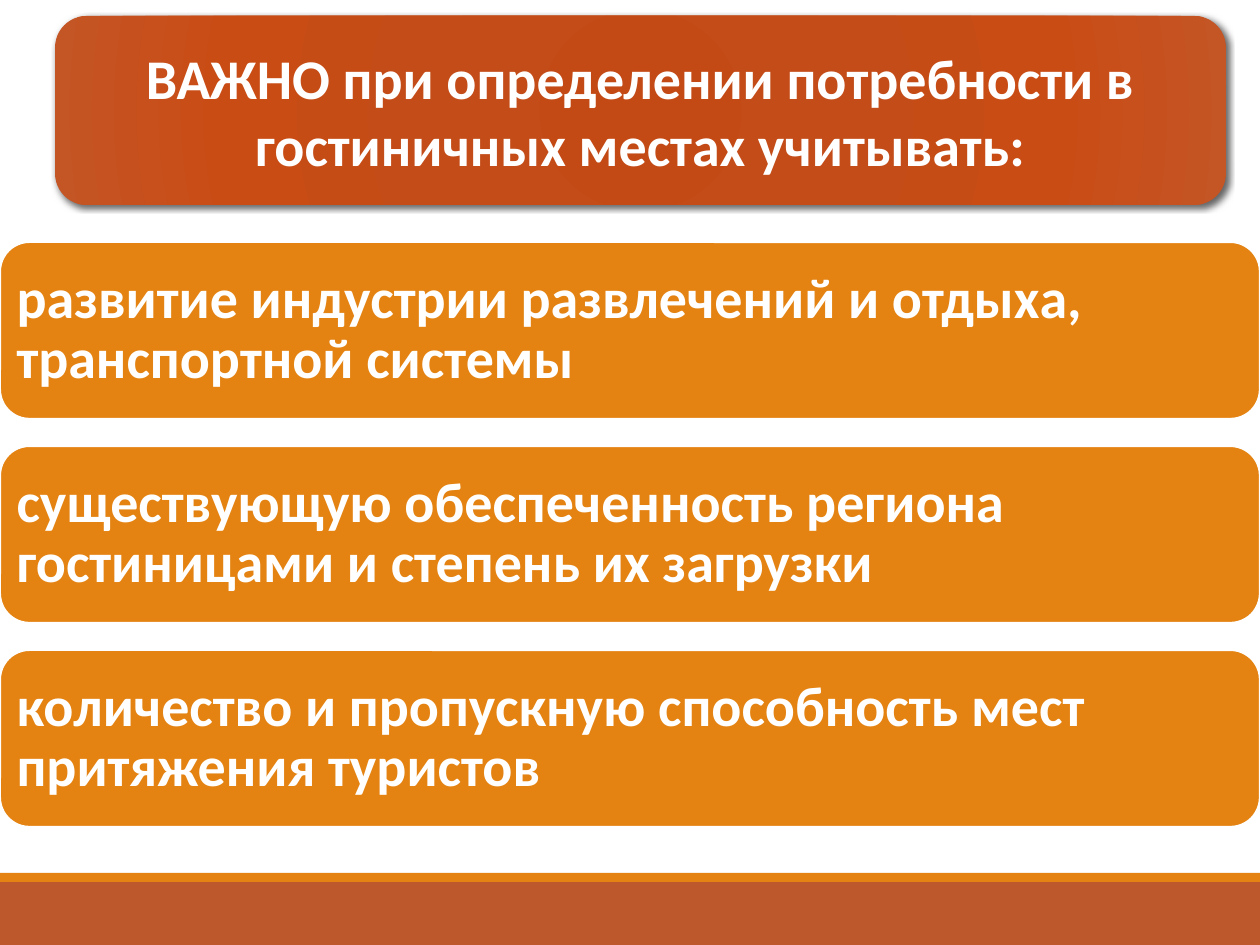
import pptx
import pptx.dml.color
import pptx.enum.shapes
import pptx.enum.text
import pptx.oxml
import pptx.oxml.ns
import pptx.util

PX = 914400 // 126
ORANGE, RUST, WHITE = "E48312", "BD582C", "FFFFFF"
SHAPES = pptx.enum.shapes.MSO_SHAPE
ALIGN = pptx.enum.text.PP_ALIGN


def rgb(value):
    return pptx.dml.color.RGBColor.from_string(value)


def add_block(kind, left, top, width, height, fill, text="", align=ALIGN.LEFT):
    """Add a filled shape without outline, with optional bold white text."""
    block = slide.shapes.add_shape(kind, left * PX, top * PX, width * PX, height * PX)
    block.shadow.inherit = False
    block.fill.solid()
    block.fill.fore_color.rgb = rgb(fill)
    block.line.fill.background()
    if text:
        frame = block.text_frame
        frame.word_wrap = True
        frame.vertical_anchor = pptx.enum.text.MSO_ANCHOR.MIDDLE
        paragraph = frame.paragraphs[0]
        paragraph.text = text
        paragraph.alignment = align
        paragraph.font.name = "Calibri"
        paragraph.font.size = pptx.util.Pt(32)
        paragraph.font.bold = True
        paragraph.font.color.rgb = rgb(WHITE)
    return block


deck = pptx.Presentation()
deck.slide_width = 1260 * PX
deck.slide_height = 945 * PX
slide = deck.slides.add_slide(deck.slide_layouts[6])

# Footer bands
add_block(SHAPES.RECTANGLE, 0, 882, 1260, 63, RUST)
add_block(SHAPES.RECTANGLE, 0, 873, 1260, 9, ORANGE)

# Heading with a radial gradient and a soft shadow
heading = add_block(SHAPES.ROUNDED_RECTANGLE, 55, 16, 1171, 189, RUST,
                    "ВАЖНО при определении потребности в гостиничных местах учитывать:",
                    ALIGN.CENTER)
stops = "".join(
    f'<a:gs pos="{position * 1000}"><a:srgbClr val="{color}"/></a:gs>'
    for position, color in [(0, "C44A15"), (34, "C34C18"), (70, "C94C15"), (100, "C45525")])
namespace = pptx.oxml.ns.nsdecls("a")
gradient = pptx.oxml.parse_xml(
    f'<a:gradFill {namespace} rotWithShape="1"><a:gsLst>{stops}</a:gsLst><a:path path="circle">'
    '<a:fillToRect l="100000" t="100000" r="100000" b="100000"/></a:path></a:gradFill>')
shadow = pptx.oxml.parse_xml(
    f'<a:outerShdw {namespace} blurRad="44450" dist="25400" dir="2700000" rotWithShape="0">'
    '<a:srgbClr val="000000"><a:alpha val="60000"/></a:srgbClr></a:outerShdw>')
properties = heading.element.spPr
properties.replace(properties.find(pptx.oxml.ns.qn("a:solidFill")), gradient)
properties.find(pptx.oxml.ns.qn("a:effectLst")).append(shadow)

# Factors to consider
factors = [
    "развитие индустрии развлечений и отдыха, транспортной системы",
    "существующую обеспеченность региона гостиницами и степень их загрузки",
    "количество и пропускную способность мест притяжения туристов",
]
for row, factor in enumerate(factors):
    card = add_block(SHAPES.ROUNDED_RECTANGLE, 0, 242 + 204 * row, 1260, 177, ORANGE, factor)
    card.line.color.rgb = rgb(WHITE)
    card.line.width = pptx.util.Pt(1.25)
    card.text_frame.margin_left = card.text_frame.margin_right = 8 * PX
    card.text_frame.paragraphs[0].line_spacing = 0.9

deck.save("out.pptx")
